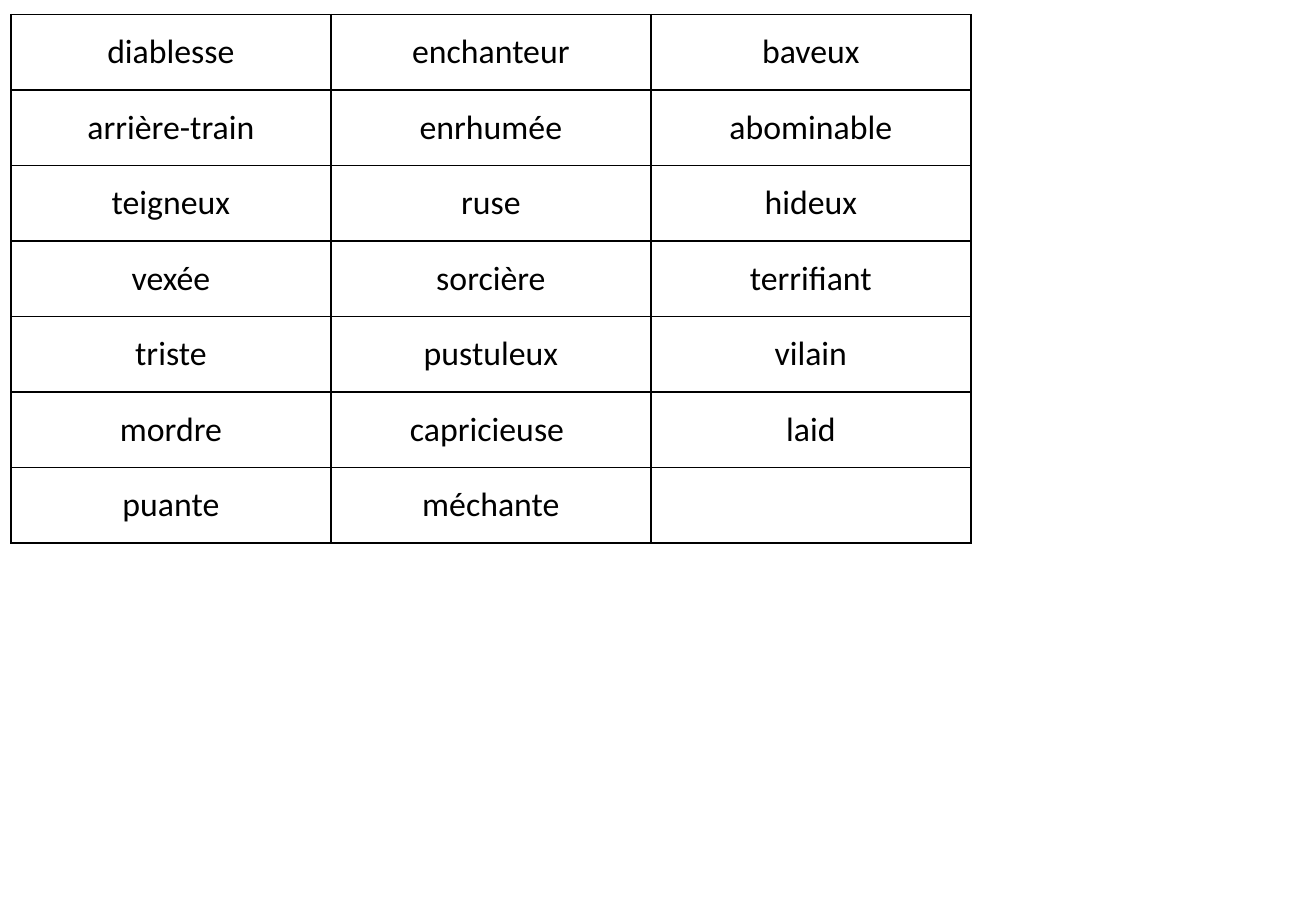
from lxml.etree import SubElement
from pptx import Presentation
from pptx.dml.color import RGBColor
from pptx.enum.text import MSO_ANCHOR, PP_ALIGN
from pptx.oxml.ns import qn
from pptx.util import Inches, Pt

COLOURS = {"ink": "000000", "paper": "FFFFFF"}
FONT = "Calibri"
COLUMN_WIDTH = Inches(7.9 / 3)
ROW_HEIGHT = Inches(4.35 / 7)
WORDS = [
    ["diablesse", "enchanteur", "baveux"],
    ["arrière-train", "enrhumée", "abominable"],
    ["teigneux", "ruse", "hideux"],
    ["vexée", "sorcière", "terrifiant"],
    ["triste", "pustuleux", "vilain"],
    ["mordre", "capricieuse ", "laid"],
    ["puante", "méchante", ""],
]


def draw_borders(cell):
    """Draw a thin line on the four sides of a cell."""
    properties = cell._tc.get_or_add_tcPr()
    for side in ("a:lnL", "a:lnR", "a:lnT", "a:lnB"):
        border = SubElement(properties, qn(side), w=str(Pt(1)))
        ink = SubElement(border, qn("a:solidFill"))
        SubElement(ink, qn("a:srgbClr"), val=COLOURS["ink"])


def write_word(cell, word):
    """Write one centred word in a bordered cell."""
    draw_borders(cell)
    cell.fill.solid()
    cell.fill.fore_color.rgb = RGBColor.from_string(COLOURS["paper"])
    cell.vertical_anchor = MSO_ANCHOR.MIDDLE
    cell.text_frame.text = word
    paragraph = cell.text_frame.paragraphs[0]
    paragraph.alignment = PP_ALIGN.CENTER
    for font in [paragraph.font] + [run.font for run in paragraph.runs]:
        font.name = FONT
        font.size = Pt(20)
        font.bold = False
        font.color.rgb = RGBColor.from_string(COLOURS["ink"])


def add_word_table(slide):
    """Add the grid of vocabulary words."""
    row_count, column_count = len(WORDS), len(WORDS[0])
    table = slide.shapes.add_table(
        row_count, column_count, Inches(0.09), Inches(0.12),
        COLUMN_WIDTH * column_count, ROW_HEIGHT * row_count,
    ).table
    table.first_row = False
    table.horz_banding = False
    for row, words in enumerate(WORDS):
        for column, word in enumerate(words):
            write_word(table.cell(row, column), word)


def main():
    """Build and save the slide."""
    presentation = Presentation()
    presentation.slide_width = Inches(10.83)
    presentation.slide_height = Inches(7.5)
    slide = presentation.slides.add_slide(presentation.slide_layouts[6])
    add_word_table(slide)
    presentation.save("out.pptx")


if __name__ == "__main__":
    main()
